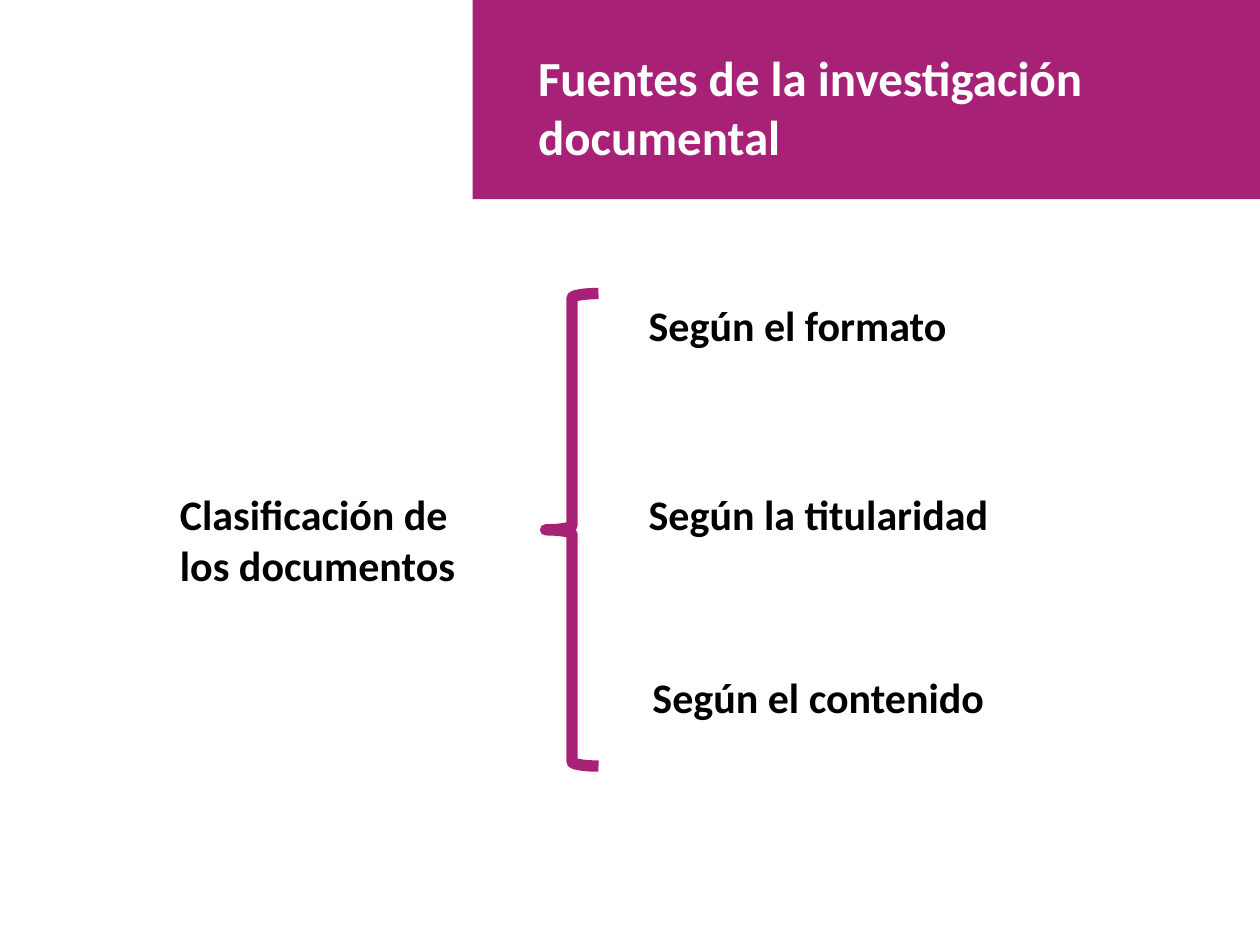
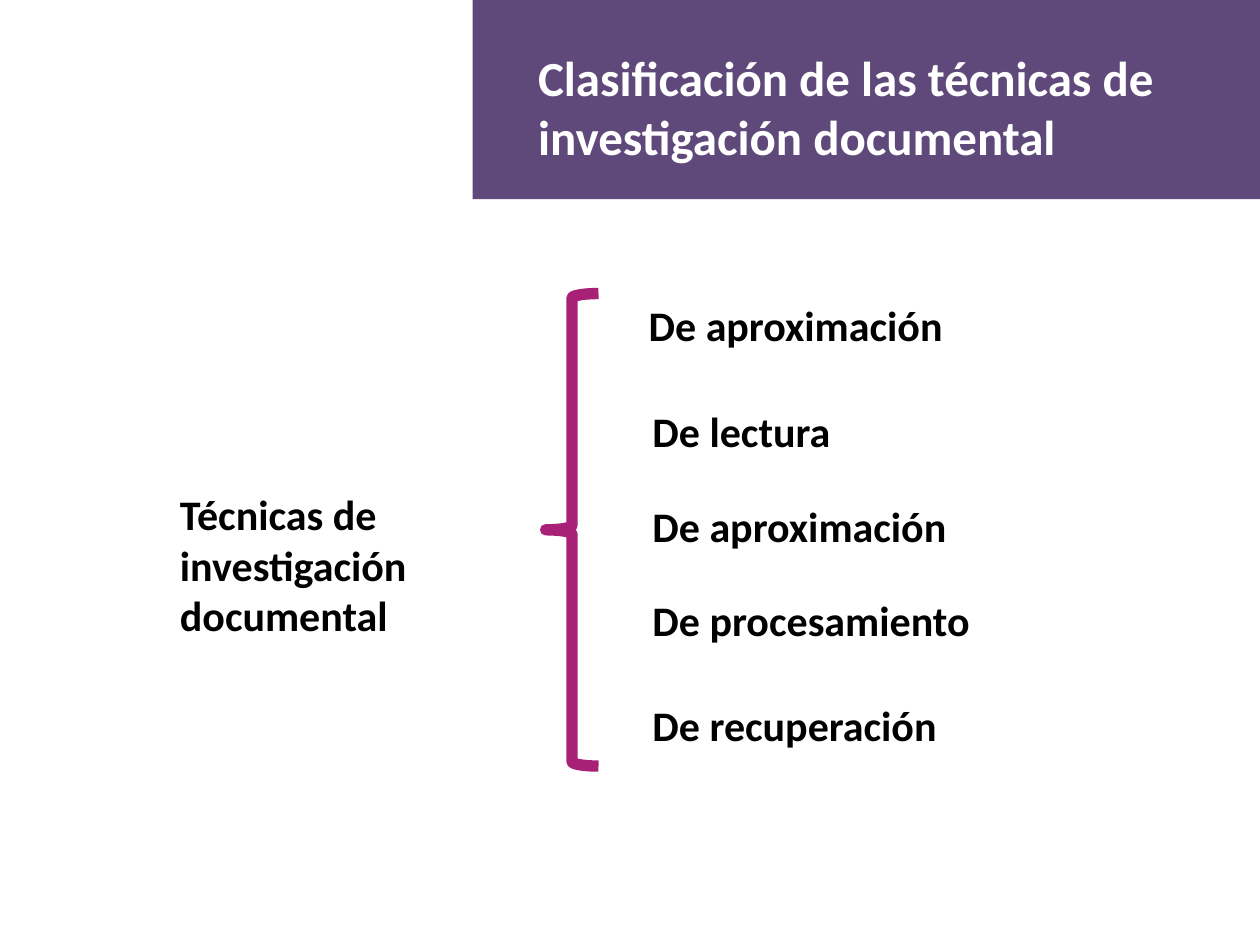
"""Build two slides that classify documents and documentary research techniques."""
from pptx import Presentation
from pptx.dml.color import RGBColor
from pptx.enum import shapes, text
from pptx.util import Inches, Pt

FONT = "Calibri"
MAGENTA, PURPLE, BLACK, WHITE = "A72277", "5F497A", "000000", "FFFFFF"

SLIDES = [
    ("Fuentes de la investigación documental", MAGENTA,
     "Clasificación de los documentos", 0.91,
     [("Según el formato", 5.05, 2.33, 2.6),
      ("Según la titularidad", 5.05, 3.83, 2.93),
      ("Según el contenido", 5.08, 5.28, 2.87)]),
    ("Clasificación de las técnicas de investigación documental", PURPLE,
     "Técnicas de investigación documental", 1.31,
     [("De aproximación", 5.05, 2.33, 2.57),
      ("De lectura", 5.08, 3.17, 1.64),
      ("De aproximación", 5.08, 3.92, 2.57),
      ("De procesamiento", 5.08, 4.67, 2.76),
      ("De recuperación", 5.08, 5.5, 2.49)]),
]


def rgb(color):
    """Turn a hex string into a colour."""
    return RGBColor.from_string(color)


def write(sp, words, size, color, wrap=True):
    """Put bold, left-aligned text at the top of a shape."""
    tf = sp.text_frame
    tf.text = words
    tf.word_wrap = wrap
    tf.auto_size = text.MSO_AUTO_SIZE.SHAPE_TO_FIT_TEXT
    tf.vertical_anchor = text.MSO_ANCHOR.TOP
    p = tf.paragraphs[0]
    p.alignment = text.PP_ALIGN.LEFT
    p.font.name, p.font.size, p.font.bold = FONT, Pt(size), True
    p.font.color.rgb = rgb(color)


def add_label(s, words, left, top, width, height=0.5, wrap=False):
    """Add a black label."""
    sp = s.shapes.add_textbox(Inches(left), Inches(top), Inches(width), Inches(height))
    write(sp, words, 24, BLACK, wrap)


def add_header(s, words, color):
    """Place the title over a coloured band in the top right corner."""
    band = s.shapes.add_shape(shapes.MSO_SHAPE.RECTANGLE,
                              Inches(3.75), 0, Inches(6.25), Inches(1.58))
    band.shadow.inherit = False
    band.fill.solid()
    band.fill.fore_color.rgb = rgb(color)
    band.line.fill.background()
    title = s.shapes.title
    title.element.addprevious(band.element)
    title.left, title.top = Inches(4.17), Inches(0.33)
    title.width, title.height = Inches(5.67), Inches(1.04)
    write(title, words, 28, WHITE)


def add_brace(s):
    """Add the brace between the topic and its classes."""
    brace = s.shapes.add_shape(shapes.MSO_SHAPE.LEFT_BRACE,
                               Inches(4.33), Inches(2.33), Inches(0.42), Inches(3.75))
    brace.shadow.inherit = False
    brace.adjustments[0] = 0.083
    brace.fill.background()
    brace.line.color.rgb = rgb(MAGENTA)
    brace.line.width = Pt(6.5)


def main():
    """Build and save the presentation."""
    prs = Presentation()
    prs.slide_width, prs.slide_height = Inches(10), Inches(7.5)
    for title, color, topic, height, classes in SLIDES:
        s = prs.slides.add_slide(prs.slide_layouts[5])
        add_header(s, title, color)
        add_label(s, topic, 1.33, 3.83, 2.67, height, wrap=True)
        for words, left, top, width in classes:
            add_label(s, words, left, top, width)
        add_brace(s)
    prs.save("out.pptx")


if __name__ == "__main__":
    main()
